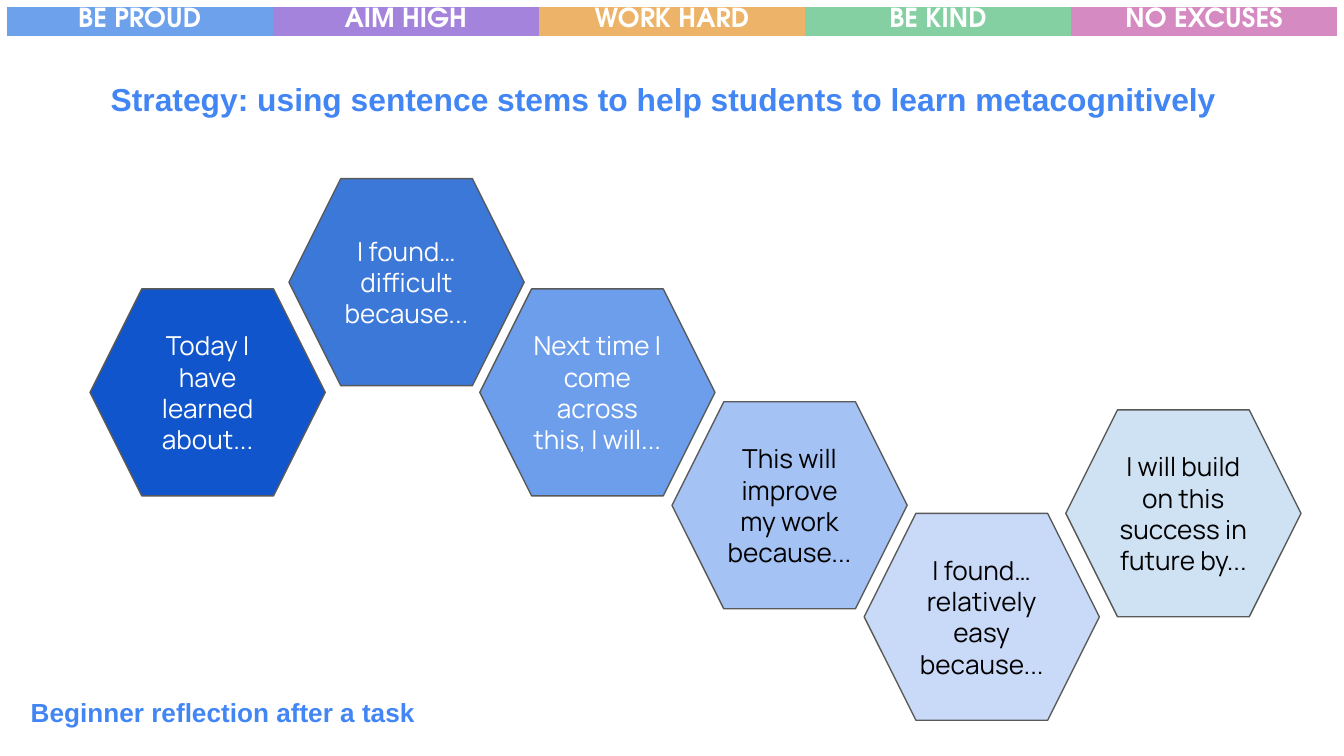
"""Build a slide of reflective sentence stems on a trail of hexagons."""
import dataclasses
import typing

import pptx
import pptx.dml.color
import pptx.enum.shapes
import pptx.enum.text
import pptx.util

Inches = pptx.util.Inches
Align = pptx.enum.text.PP_ALIGN
Anchor = pptx.enum.text.MSO_ANCHOR
Fit = pptx.enum.text.MSO_AUTO_SIZE


@dataclasses.dataclass(frozen=True)
class Theme:
    """Hold the colours, fonts and type sizes."""
    white: str = "FFFFFF"
    black: str = "000000"
    blue: str = "4285F4"
    edge: str = "595959"
    head: float = 17
    text: float = 14
    sans: str = "Arial"
    stem: str = "Manrope"
    band: str = "TeX Gyre Adventor"


@dataclasses.dataclass(frozen=True)
class Value:
    """Describe one cell of the top band."""
    text: str
    fill: str


@dataclasses.dataclass(frozen=True)
class Stem:
    """Describe one hexagon."""
    left: float
    top: float
    text: str
    fill: str
    ink: str


THEME = Theme()
VALUES = [
    Value("BE PROUD", "6DA1EB"),
    Value("AIM HIGH", "A383DC"),
    Value("WORK HARD", "EDB469"),
    Value("BE KIND", "85D0A2"),
    Value("NO EXCUSES", "D58AC1"),
]
STEMS = [
    Stem(0.67, 2.15, "Today I have learned about...", "1155CC", THEME.white),
    Stem(2.15, 1.33, "I found…\ndifficult because...", "3C78D8", THEME.white),
    Stem(3.57, 2.15, "Next time I come across this, I will...", "6D9EEB", THEME.white),
    Stem(5, 2.99, "This will improve my work because...", "A4C2F4", THEME.black),
    Stem(6.43, 3.82, "I found…\nrelatively easy because...", "C9DAF8", THEME.black),
    Stem(7.93, 3.05, "I will build on this success in future by...", "CFE2F3", THEME.black),
]


def tint(code: str) -> pptx.dml.color.RGBColor:
    """Turn a hex code into a colour."""
    return pptx.dml.color.RGBColor.from_string(code)


def write(frame: typing.Any, text: str, *, font: str, ink: str,
          size: float = THEME.text, bold: bool = False,
          align: Align = Align.CENTER, inset: float = 0.1,
          anchor: Anchor = Anchor.TOP, fit: Fit = Fit.NONE,
          space: float = 1) -> None:
    """Fill a text frame and format every line."""
    frame.text = text
    frame.word_wrap = True
    frame.auto_size = fit
    frame.vertical_anchor = anchor
    frame.margin_left = frame.margin_right = Inches(inset)
    frame.margin_top = frame.margin_bottom = Inches(inset)
    for line in frame.paragraphs:
        line.alignment = align
        line.line_spacing = space
        line.space_before = pptx.util.Pt(0)
        for run in line.runs:
            run.font.name = font
            run.font.size = pptx.util.Pt(size)
            run.font.bold = bold
            run.font.color.rgb = tint(ink)


def place(shape: typing.Any, left: float, top: float, width: float, height: float) -> None:
    """Move and size a shape."""
    shape.left, shape.top = Inches(left), Inches(top)
    shape.width, shape.height = Inches(width), Inches(height)


def draw_band(slide: typing.Any, values: list[Value]) -> None:
    """Draw the band of values along the top."""
    wide, high = 1.98, 0.22
    frame = slide.shapes.add_table(
        1, len(values), Inches(0.05), Inches(0.05),
        Inches(wide * len(values)), Inches(high))
    table = frame.table
    table.first_row = table.horz_banding = False
    style = frame._element.xpath(".//a:tableStyleId")[0]
    style.text = "{2D5ABB26-0587-4C30-8999-92F81FD0307C}"
    for spot, value in enumerate(values):
        table.columns[spot].width = Inches(wide)
        cell = table.cell(0, spot)
        cell.fill.solid()
        cell.fill.fore_color.rgb = tint(value.fill)
        write(cell.text_frame, value.text, font=THEME.band, ink=THEME.white,
              bold=True, inset=0, space=0.8)
        cell.margin_left = cell.margin_right = 0
        cell.margin_top = cell.margin_bottom = 0
        cell.vertical_anchor = Anchor.MIDDLE


def draw_stem(slide: typing.Any, stem: Stem) -> None:
    """Draw one hexagon with its sentence stem."""
    shape = slide.shapes.add_shape(
        pptx.enum.shapes.MSO_SHAPE.HEXAGON, Inches(stem.left),
        Inches(stem.top), Inches(1.75), Inches(1.54))
    shape.adjustments[0] = 0.25
    shape.shadow.inherit = False
    shape.fill.solid()
    shape.fill.fore_color.rgb = tint(stem.fill)
    shape.line.color.rgb = tint(THEME.edge)
    shape.line.width = pptx.util.Pt(0.75)
    write(shape.text_frame, stem.text, font=THEME.stem, ink=stem.ink,
          anchor=Anchor.MIDDLE)


def main() -> None:
    """Build and save the slide."""
    deck = pptx.Presentation()
    deck.slide_width, deck.slide_height = Inches(10), Inches(10 * 9 / 16)
    slide = deck.slides.add_slide(deck.slide_layouts[5])
    draw_band(slide, VALUES)
    for stem in STEMS:
        draw_stem(slide, stem)
    title = slide.shapes.title
    place(title, -0.06, 0.49, 10, 0.49)
    write(title.text_frame,
          "Strategy: using sentence stems to help students to learn metacognitively",
          font=THEME.sans, ink=THEME.blue, size=THEME.head, bold=True,
          fit=Fit.SHAPE_TO_FIT_TEXT)
    note = slide.shapes.add_textbox(0, 0, 0, 0)
    place(note, 0.13, 5.08, 3.98, 0.44)
    write(note.text_frame, "Beginner reflection after a task",
          font=THEME.sans, ink=THEME.blue, bold=True, align=Align.LEFT,
          fit=Fit.SHAPE_TO_FIT_TEXT)
    deck.save("out.pptx")


if __name__ == "__main__":
    main()
